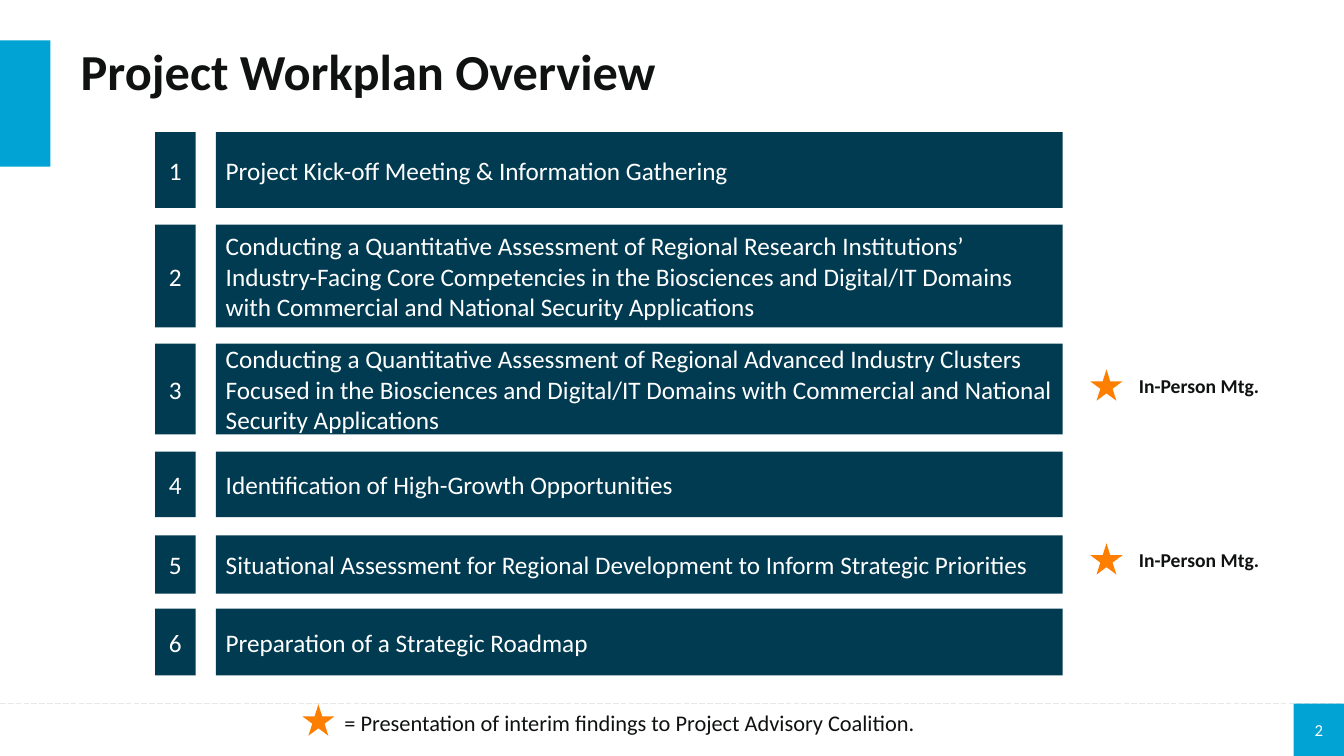
from lxml import etree
from pptx import Presentation
from pptx.dml.color import RGBColor
from pptx.enum import dml, shapes, text
from pptx.oxml.ns import qn
from pptx.util import Cm, Pt

COLORS = {
    "navy": "003B52",
    "blue": "00A3D3",
    "orange": "FE7F00",
    "ink": "101212",
    "white": "FFFFFF",
    "rule": "E6E9E9",
}
FONT = "Calibri"
RECTANGLE = shapes.MSO_SHAPE.RECTANGLE
STAR = shapes.MSO_SHAPE.STAR_5_POINT
LEFT, CENTER = text.PP_ALIGN.LEFT, text.PP_ALIGN.CENTER


def add_block(container, kind, left, top, width, height, color):
    shape = container.add_shape(kind, Cm(left), Cm(top), Cm(width), Cm(height))
    shape.shadow.inherit = False
    shape.fill.solid()
    shape.fill.fore_color.rgb = RGBColor.from_string(COLORS[color])
    shape.line.fill.background()
    return shape


def write(shape, words, size, color, align=LEFT, bold=False, wrap=True):
    frame = shape.text_frame
    frame.word_wrap = wrap
    paragraph = frame.paragraphs[0]
    paragraph.text = words
    paragraph.alignment = align
    paragraph.font.name = FONT
    paragraph.font.size = Pt(size)
    paragraph.font.bold = bold
    paragraph.font.color.rgb = RGBColor.from_string(COLORS[color])
    return paragraph


presentation = Presentation()
presentation.slide_width = Cm(33.87)
presentation.slide_height = Cm(19.05)
slide = presentation.slides.add_slide(presentation.slide_layouts[5])

footer_rule = slide.shapes.add_connector(
    shapes.MSO_CONNECTOR.STRAIGHT, Cm(0), Cm(17.73), Cm(33.87), Cm(17.73))
footer_rule.line.color.rgb = RGBColor.from_string(COLORS["rule"])
footer_rule.line.width = Pt(0.5)
footer_rule.line.dash_style = dml.MSO_LINE.LONG_DASH
etree.SubElement(footer_rule._element.spPr, qn("a:effectLst"))

add_block(slide.shapes, RECTANGLE, 0, 1.02, 1.27, 3.18, "blue")
page_number = add_block(slide.shapes, RECTANGLE, 32.6, 17.73, 1.27, 1.32, "blue")
write(page_number, "2", 12, "white", CENTER)

title = slide.shapes.title
title.left, title.top, title.width, title.height = Cm(1.78), Cm(0.91), Cm(30.48), Cm(1.91)
title.text_frame.vertical_anchor = text.MSO_ANCHOR.MIDDLE
write(title, "Project Workplan Overview", 36, "ink", bold=True).line_spacing = 0.9

steps = [
    (3.33, 1.91, "Project Kick-off Meeting & Information Gathering"),
    (5.66, 2.59, "Conducting a Quantitative Assessment of Regional Research Institutions’ "
                 "Industry-Facing Core Competencies in the Biosciences and Digital/IT Domains "
                 "with Commercial and National Security Applications"),
    (8.66, 2.29, "Conducting a Quantitative Assessment of Regional Advanced Industry Clusters "
                 "Focused in the Biosciences and Digital/IT Domains with Commercial and National "
                 "Security Applications"),
    (11.38, 1.65, "Identification of High-Growth Opportunities"),
    (13.49, 1.47, "Situational Assessment for Regional Development to Inform Strategic Priorities"),
    (15.34, 1.68, "Preparation of a Strategic Roadmap"),
]
for number, (top, height, task) in enumerate(steps, start=1):
    number_box = add_block(slide.shapes, RECTANGLE, 3.91, top, 1.02, height, "navy")
    write(number_box, str(number), 18, "white", CENTER)
    task_box = add_block(slide.shapes, RECTANGLE, 5.44, top, 21.34, height, "navy")
    write(task_box, task, 18, "white")

for top in (9.31, 13.69):
    add_block(slide.shapes, STAR, 27.48, top, 0.81, 0.79, "orange")
    meeting = slide.shapes.add_textbox(Cm(28.45), Cm(top), Cm(3.58), Cm(0.86))
    write(meeting, "In-Person Mtg.", 14, "ink", bold=True, wrap=False)

legend = slide.shapes.add_group_shape()
add_block(legend.shapes, STAR, 7.62, 17.75, 0.81, 0.79, "orange")
legend_text = legend.shapes.add_textbox(Cm(8.43), Cm(17.75), Cm(15.09), Cm(0.94))
write(legend_text, "= Presentation of interim findings to Project Advisory Coalition.",
      16, "ink", wrap=False).space_after = Pt(6)

presentation.save("out.pptx")
